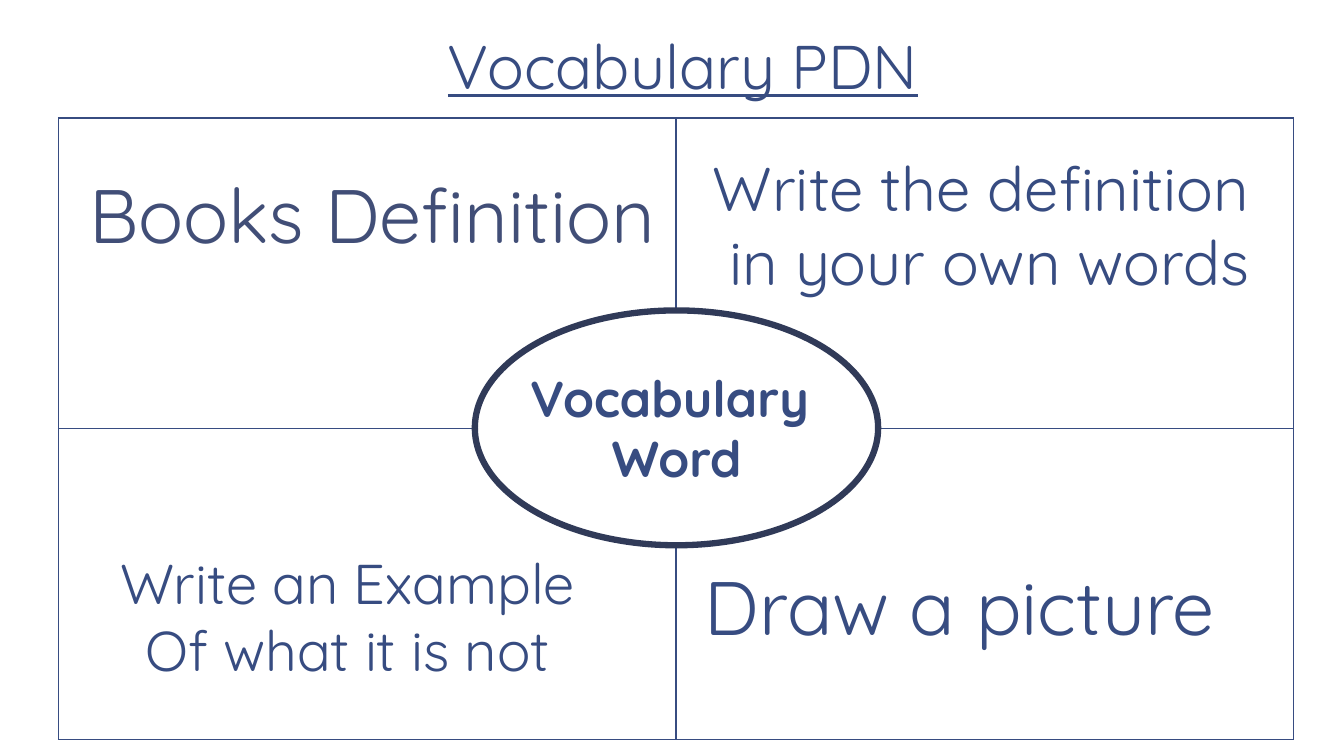
from dataclasses import dataclass

from lxml import etree
from pptx import Presentation
from pptx.dml.color import RGBColor
from pptx.enum import shapes, text
from pptx.oxml import ns
from pptx.util import Inches, Pt


@dataclass(frozen=True)
class Theme:
    font: str = "Quicksand"
    navy: str = "374C81"
    slate: str = "414E77"
    rim: str = "303A58"
    white: str = "FFFFFF"
    title: int = 44
    heading: int = 54
    prompt: int = 44
    example: int = 40
    word: int = 36


THEME = Theme()


def color(value):
    return RGBColor.from_string(value)


def write_lines(frame, lines, size, ink=THEME.navy, bold=False, underline=False):
    frame.text = "\n".join(lines)
    for para in frame.paragraphs:
        para.alignment = text.PP_ALIGN.CENTER
        font = para.font
        font.name = THEME.font
        font.size = Pt(size)
        font.bold = bold
        font.underline = underline
        font.color.rgb = color(ink)


def set_title(page, title):
    box = page.shapes.title
    box.left, box.top = Inches(1.22), Inches(0.08)
    box.width, box.height = Inches(11.11), Inches(1)
    frame = box.text_frame
    frame.auto_size = text.MSO_AUTO_SIZE.NONE
    frame.vertical_anchor = text.MSO_ANCHOR.BOTTOM
    frame.margin_left = frame.margin_right = Inches(0.13)
    frame.margin_top = frame.margin_bottom = Inches(0.07)
    write_lines(frame, [title], THEME.title, underline=True)
    frame.paragraphs[0].line_spacing = 0.85


def outline_cell(cell):
    properties = cell._tc.get_or_add_tcPr()
    for side in ("lnL", "lnR", "lnT", "lnB"):
        line = etree.SubElement(properties, ns.qn(f"a:{side}"), w=str(Pt(1)))
        fill = etree.SubElement(line, ns.qn("a:solidFill"))
        etree.SubElement(fill, ns.qn("a:srgbClr"), val=THEME.navy)
    cell.fill.background()


def add_quadrants(page):
    width, height = Inches(12.25), Inches(6.17)
    table = page.shapes.add_table(
        2, 2, Inches(0.58), Inches(1.17), width, height
    ).table
    table.first_row = table.horz_banding = False
    for cell in table.iter_cells():
        outline_cell(cell)


def add_center_oval(page):
    oval = page.shapes.add_shape(
        shapes.MSO_SHAPE.OVAL, Inches(4.71), Inches(3.08), Inches(4), Inches(2.33)
    )
    oval.shadow.inherit = False
    oval.fill.solid()
    oval.fill.fore_color.rgb = color(THEME.white)
    oval.line.color.rgb = color(THEME.rim)
    oval.line.width = Pt(4.5)


def add_label(page, lines, left, top, width, height, size, **style):
    box = page.shapes.add_textbox(
        Inches(left), Inches(top), Inches(width), Inches(height)
    )
    frame = box.text_frame
    frame.word_wrap = True
    write_lines(frame, lines, size, **style)
    return frame


def main():
    deck = Presentation()
    deck.slide_width, deck.slide_height = Inches(13.33), Inches(7.5)
    page = deck.slides.add_slide(deck.slide_layouts[5])

    set_title(page, "Vocabulary PDN")
    add_quadrants(page)
    add_center_oval(page)

    add_label(page, ["Vocabulary ", "Word"], 5.07, 3.59, 3.28, 1.31,
              THEME.word, bold=True)
    book = add_label(page, ["Books Definition"], 0.73, 1.62, 5.93, 1.01,
                     THEME.heading, ink=THEME.slate)
    book.word_wrap = False
    add_label(page, ["Write the definition ", "in your own words"],
              6.85, 1.44, 5.93, 1.58, THEME.prompt)
    add_label(page, ["Write an Example", "Of what it is not"],
              0.48, 5.39, 5.93, 1.45, THEME.example)
    drawing = add_label(page, ["Draw a picture"], 6.6, 5.51, 6.24, 1.01,
                        THEME.heading)
    drawing.margin_right = Inches(0.5)

    deck.save("out.pptx")


if __name__ == "__main__":
    main()
